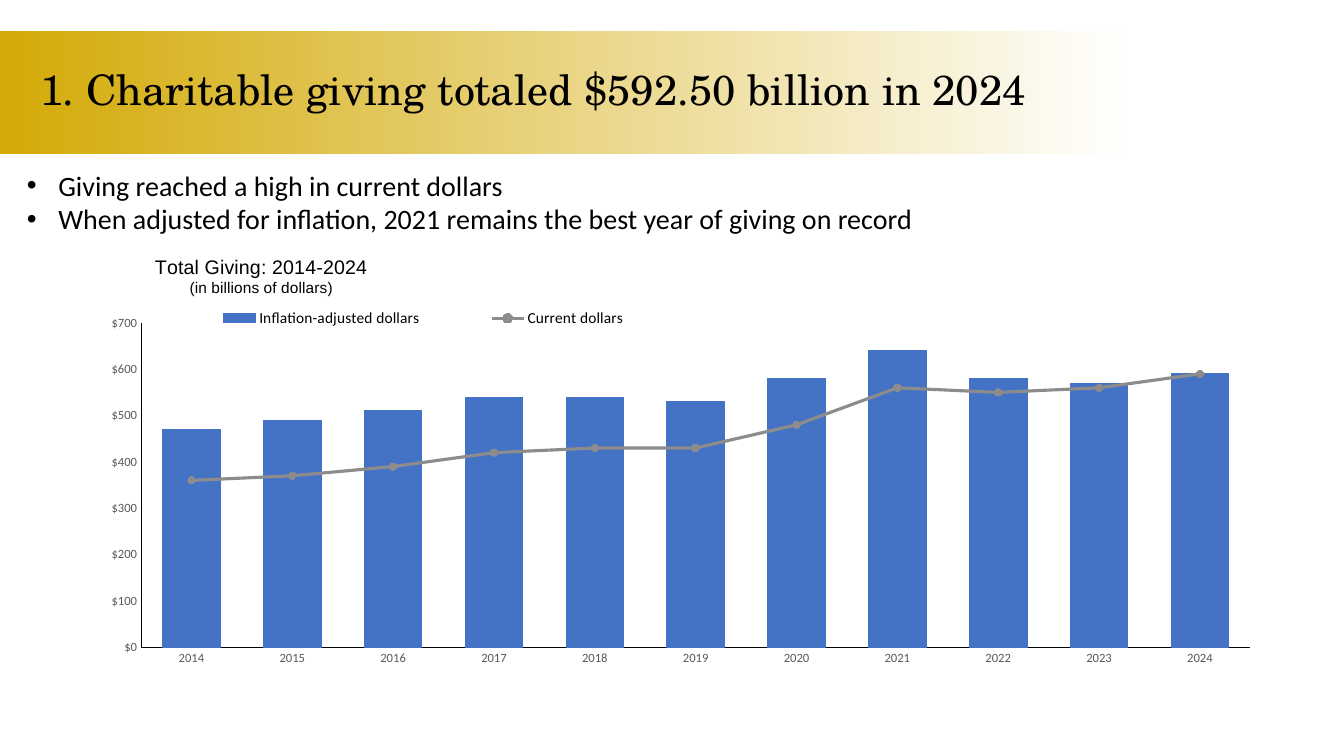
from copy import deepcopy
from dataclasses import dataclass

from lxml.etree import SubElement
from pptx import Presentation
from pptx.chart.data import CategoryChartData
from pptx.dml.color import RGBColor
from pptx.enum.chart import XL_CHART_TYPE, XL_LEGEND_POSITION, XL_MARKER_STYLE, XL_TICK_MARK
from pptx.enum.shapes import MSO_SHAPE
from pptx.enum.text import MSO_ANCHOR, MSO_AUTO_SIZE, PP_ALIGN
from pptx.oxml import parse_xml
from pptx.oxml.ns import nsdecls, qn
from pptx.util import Cm, Pt


@dataclass(frozen=True)
class Theme:
    """Colours, fonts and type sizes of the slide."""
    gold: str = "D3AA07"
    white: str = "FFFFFF"
    black: str = "000000"
    axis_text: str = "595959"
    bars: str = "4472C4"
    line: str = "8C8C8C"
    title_font: str = "TeX Gyre Schola"
    body_font: str = "Calibri"
    chart_title_font: str = "Arial"
    title_size: float = 30
    body_size: float = 20
    chart_title_size: float = 14
    chart_note_size: float = 11
    chart_size: float = 10
    legend_size: float = 11
    axis_size: float = 9


@dataclass(frozen=True)
class Box:
    """A region of the slide in centimetres."""
    left: float
    top: float
    width: float
    height: float

    def lengths(self):
        """Return left, top, width and height as lengths."""
        return Cm(self.left), Cm(self.top), Cm(self.width), Cm(self.height)


THEME = Theme()
YEARS = [str(year) for year in range(2014, 2025)]
INFLATION_ADJUSTED = [470, 490, 510, 540, 540, 530, 580, 640, 580, 570, 590]
CURRENT = [360, 370, 390, 420, 430, 430, 480, 560, 550, 560, 590]


def format_font(font, *, size, name, color=THEME.black):
    """Set the size, typeface and colour of a font."""
    font.size = Pt(size)
    font.name = name
    font.bold = False
    font.color.rgb = RGBColor.from_string(color)


def write_span(para, text, **font_format):
    """Add a formatted span of text to a paragraph."""
    span = para.add_run()
    span.text = text
    format_font(span.font, **font_format)


def format_line(line, color, width):
    """Set the colour and width of a line."""
    line.color.rgb = RGBColor.from_string(color)
    line.width = Pt(width)


def add_heading(page, box, text):
    """Place the title over a gold band that fades to the right."""
    band = page.shapes.add_shape(MSO_SHAPE.RECTANGLE, *box.lengths())
    band.shadow.inherit = False
    band.line.fill.background()
    band.fill.gradient()
    band.fill.gradient_angle = 0
    stops = zip(band.fill.gradient_stops, (THEME.gold, THEME.white), (0, 0.98))
    for stop, color, position in stops:
        stop.color.rgb = RGBColor.from_string(color)
        stop.position = position

    title = page.shapes.title
    title.element.addprevious(band.element)
    title_box = Box(box.left + 0.76, box.top + 0.43, box.width + 0.15, box.height - 0.92)
    title.left, title.top, title.width, title.height = title_box.lengths()
    frame = title.text_frame
    frame.auto_size = MSO_AUTO_SIZE.NONE
    frame.vertical_anchor = MSO_ANCHOR.MIDDLE
    para = frame.paragraphs[0]
    para.alignment = PP_ALIGN.LEFT
    para.line_spacing = 0.9
    write_span(para, text, size=THEME.title_size, name=THEME.title_font)


def add_bullets(page, box, lines):
    """Place a bulleted list."""
    frame = page.shapes.add_textbox(*box.lengths()).text_frame
    frame.word_wrap = True
    for index, text in enumerate(lines):
        para = frame.add_paragraph() if index else frame.paragraphs[0]
        properties = para._p.get_or_add_pPr()
        properties.set("marL", str(Cm(0.79)))
        properties.set("indent", str(-Cm(0.79)))
        SubElement(properties, qn("a:buFont"), typeface="Arial")
        SubElement(properties, qn("a:buChar"), char="•")
        write_span(para, text, size=THEME.body_size, name=THEME.body_font)


def place_part(part, index, inner=False, **percents):
    """Give a chart part a manual layout in percent of the chart."""
    for layout in part.findall(qn("c:layout")):
        part.remove(layout)
    target = '<c:layoutTarget val="inner"/>' if inner else ""
    modes = "".join(f'<c:{key}Mode val="edge"/>' for key in ("x", "y"))
    values = "".join(f'<c:{key} val="{value / 100}"/>' for key, value in percents.items())
    part.insert(index, parse_xml(
        f'<c:layout {nsdecls("c")}><c:manualLayout>{target}{modes}{values}'
        '</c:manualLayout></c:layout>'))


def move_to_line_plot(chart):
    """Turn the second series into a line on hidden secondary axes."""
    plot_area = chart._chartSpace.chart.plotArea
    bar_plot = plot_area.find(qn("c:barChart"))
    series = bar_plot.findall(qn("c:ser"))[1]
    for invert in series.findall(qn("c:invertIfNegative")):
        series.remove(invert)
    line_plot = parse_xml(
        f'<c:lineChart {nsdecls("c")}><c:grouping val="standard"/><c:varyColors val="0"/>'
        '<c:marker val="1"/><c:axId val="5001"/><c:axId val="5002"/></c:lineChart>')
    line_plot.insert(2, series)
    bar_plot.addnext(line_plot)

    axes = [plot_area.find(qn(tag)) for tag in ("c:catAx", "c:valAx")]
    for axis, own, other in zip(axes, ("5001", "5002"), ("5002", "5001")):
        twin = deepcopy(axis)
        for tag, value in (("c:axId", own), ("c:crossAx", other), ("c:delete", "1")):
            twin.find(qn(tag)).set("val", value)
        if axis is axes[1]:
            twin.find(qn("c:axPos")).set("val", "r")
            twin.find(qn("c:crosses")).set("val", "max")
        plot_area.findall(qn("c:valAx"))[-1].addnext(twin)


def format_axes(chart):
    """Style both visible axes and fix the dollar scale."""
    for axis in (chart.category_axis, chart.value_axis):
        axis.has_major_gridlines = False
        axis.major_tick_mark = axis.minor_tick_mark = XL_TICK_MARK.NONE
        format_font(axis.tick_labels.font, size=THEME.axis_size,
                    name=THEME.body_font, color=THEME.axis_text)
        format_line(axis.format.line, THEME.black, 0.75)
    dollars = chart.value_axis
    dollars.minimum_scale, dollars.maximum_scale, dollars.major_unit = 0, 700, 100
    dollars.tick_labels.number_format = '"$"#,##0'
    dollars.tick_labels.number_format_is_linked = False


def format_series(chart):
    """Style the bars and the line."""
    bar_plot, line_plot = chart.plots
    bar_plot.gap_width, bar_plot.overlap = 75, -25
    bar_plot.vary_by_categories = False
    bars, line = bar_plot.series[0], line_plot.series[0]
    line.smooth = False
    line.marker.style, line.marker.size = XL_MARKER_STYLE.CIRCLE, 5
    for part, color in ((bars.format, THEME.bars), (line.marker.format, THEME.line)):
        part.fill.solid()
        part.fill.fore_color.rgb = RGBColor.from_string(color)
        format_line(part.line, color, 0.75)
    format_line(line.format.line, THEME.line, 2.25)


def add_giving_chart(page, box):
    """Place the chart of giving by year, with its title and legend."""
    chart_data = CategoryChartData()
    chart_data.categories = YEARS
    chart_data.add_series("Inflation-adjusted dollars", INFLATION_ADJUSTED)
    chart_data.add_series("Current dollars", CURRENT)
    chart = page.shapes.add_chart(
        XL_CHART_TYPE.COLUMN_CLUSTERED, *box.lengths(), chart_data).chart
    format_font(chart.font, size=THEME.chart_size, name=THEME.body_font)
    format_axes(chart)
    move_to_line_plot(chart)
    format_series(chart)

    frame = chart.chart_title.text_frame
    write_span(frame.paragraphs[0], "Total Giving: 2014-2024",
               size=THEME.chart_title_size, name=THEME.chart_title_font)
    write_span(frame.add_paragraph(), "(in billions of dollars)",
               size=THEME.chart_note_size, name=THEME.chart_title_font)
    chart.has_legend = True
    chart.legend.position = XL_LEGEND_POSITION.BOTTOM
    chart.legend.include_in_layout = False
    format_font(chart.legend.font, size=THEME.legend_size, name=THEME.body_font)

    place_part(chart.chart_title._element, 1, x=5.4, y=2)
    place_part(chart.legend._element, 1, x=5.8, y=13.3, w=45, h=6)
    place_part(chart._chartSpace.chart.plotArea, 0, inner=True, x=4.5, y=17.3, w=93.5, h=69.3)


def main():
    """Build the slide and save the deck."""
    deck = Presentation()
    deck.slide_width, deck.slide_height = Cm(33.87), Cm(19.05)
    page = deck.slides.add_slide(deck.slide_layouts.get_by_name("Title Only"))
    add_heading(page, Box(0, 0.79, 29.06, 3.1),
                "1. Charitable giving totaled $592.50 billion in 2024")
    add_bullets(page, Box(0.43, 4.11, 26.29, 1.96), [
        "Giving reached a high in current dollars",
        "When adjusted for inflation, 2021 remains the best year of giving on record"])
    add_giving_chart(page, Box(2.21, 6.1, 29.9, 11.79))
    deck.save("out.pptx")


if __name__ == "__main__":
    main()
